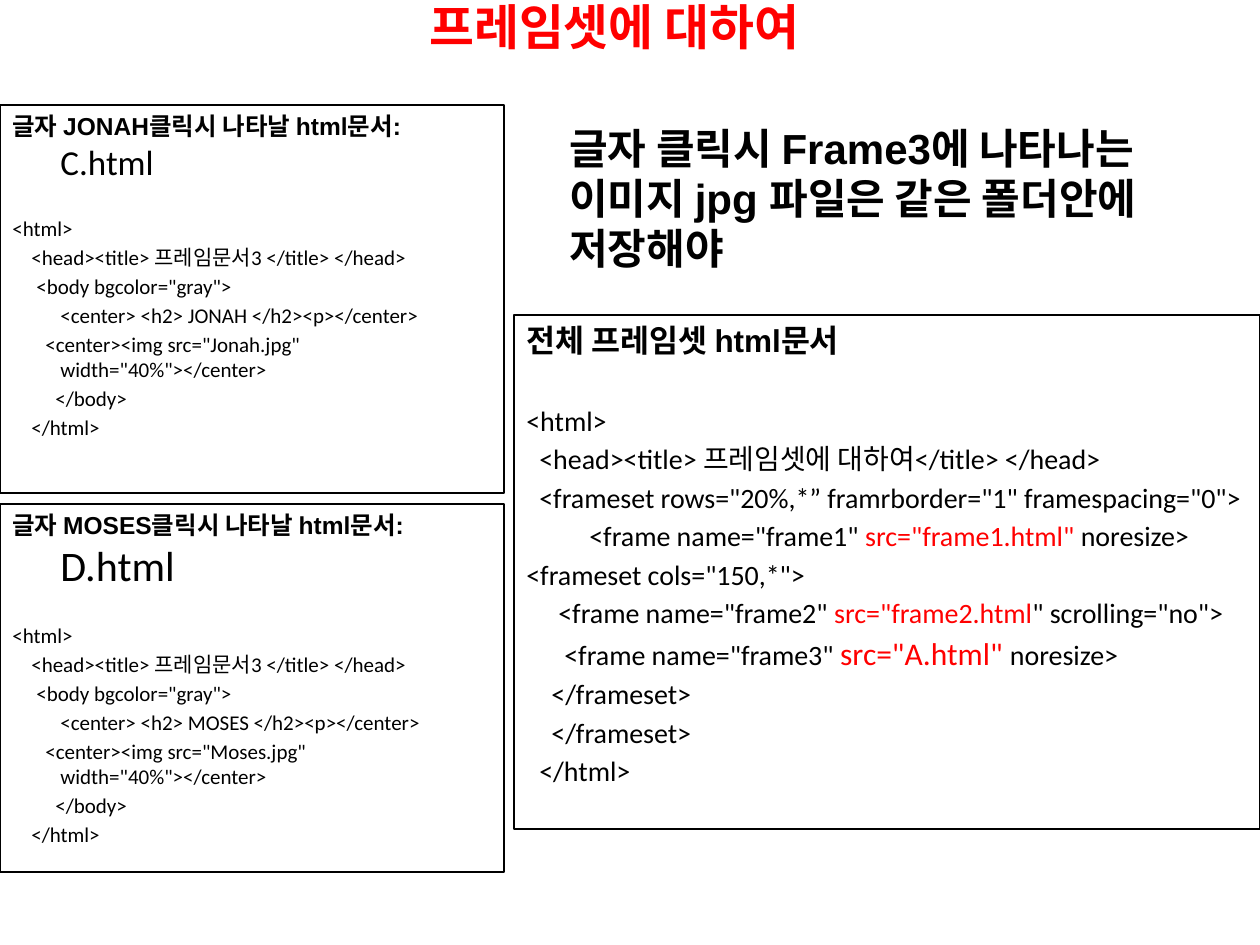
from dataclasses import dataclass

from pptx import Presentation
from pptx.dml.color import RGBColor
from pptx.enum.shapes import MSO_SHAPE
from pptx.enum.text import MSO_ANCHOR, MSO_AUTO_SIZE, PP_ALIGN
from pptx.util import Emu, Pt


@dataclass(frozen=True)
class Theme:
    ink: RGBColor = RGBColor(0x00, 0x00, 0x00)
    accent: RGBColor = RGBColor(0xFF, 0x00, 0x00)
    head_font: str = "Arial"
    code_font: str = "Calibri"
    title: float = 27.9
    note: float = 24
    code: float = 12
    code_head: float = 14
    frameset: float = 16
    frameset_head: float = 18
    border: float = 0.75
    before: float = 0.175
    blank_line: float = 1.4
    hanging: int = 48


@dataclass(frozen=True)
class Box:
    left: int
    top: int
    width: int
    height: int


@dataclass(frozen=True)
class Run:
    text: str
    size: float
    font: str
    bold: bool = False
    color: RGBColor = Theme.ink


@dataclass(frozen=True)
class Line:
    runs: list[Run]
    offset: int = 0
    gap: float = 0


@dataclass(frozen=True)
class Panel:
    box: Box
    lines: list[Line]


T = Theme()


def px(n: int) -> Emu:
    return Emu(round(n * 914400 / 126))


def set_all(obj, values: dict) -> None:
    for name, value in values.items():
        setattr(obj, name, value)


def add_runs(p, runs: list[Run]) -> None:
    for run in runs:
        r = p.add_run()
        r.text = run.text
        set_all(r.font, {"name": run.font, "size": Pt(run.size), "bold": run.bold})
        r.font.color.rgb = run.color


def add_text(s, box: Box, run: Run, frame: dict, para: dict) -> None:
    sp = s.shapes.add_textbox(px(box.left), px(box.top), px(box.width), px(box.height))
    set_all(sp.text_frame, {"word_wrap": True, **frame})
    p = sp.text_frame.paragraphs[0]
    set_all(p, para)
    add_runs(p, [run])


def add_panel(s, panel: Panel) -> None:
    b = panel.box
    sp = s.shapes.add_shape(MSO_SHAPE.RECTANGLE, px(b.left), px(b.top), px(b.width), px(b.height))
    sp.shadow.inherit = False
    sp.fill.background()
    sp.line.color.rgb = T.ink
    sp.line.width = Pt(T.border)
    tf = sp.text_frame
    set_all(tf, {"word_wrap": True, "vertical_anchor": MSO_ANCHOR.TOP})
    for i, line in enumerate(panel.lines):
        p = tf.add_paragraph() if i else tf.paragraphs[0]
        before = Pt(round(line.runs[0].size * T.before + line.gap, 1))
        set_all(p, {"alignment": PP_ALIGN.LEFT, "space_before": before})
        pPr = p._p.get_or_add_pPr()
        pPr.set("marL", str(px(T.hanging)))
        pPr.set("indent", str(px(line.offset - T.hanging)))
        add_runs(p, line.runs)


def code_lines(size: float, rows: list[tuple]) -> list[Line]:
    lines = []
    for i, (offset, *parts) in enumerate(rows):
        runs = [part if isinstance(part, Run) else Run(part, size, T.code_font) for part in parts]
        lines.append(Line(runs, offset, 0 if i else size * T.blank_line))
    return lines


def source(text: str, size: float = T.frameset) -> Run:
    return Run(text, size, T.code_font, color=T.accent)


def name_panel(box: Box, name: str, file: str, file_size: float) -> Panel:
    head = Line([
        Run(f"글자 {name.upper()}클릭시 나타날 html문서:", T.code_head, T.head_font, True),
        Run(" ", T.code, T.code_font),
        Run(file, file_size, T.code_font),
    ])
    return Panel(box, [head] + code_lines(T.code, [
        (0, "<html>"),
        (19, "<head><title> 프레임문서3 </title> </head>"),
        (24, '<body bgcolor="gray">'),
        (48, f"<center> <h2> {name.upper()} </h2><p></center>"),
        (33, f'<center><img src="{name}.jpg" width="40%"></center>'),
        (43, "</body>"),
        (19, "</html>"),
    ]))


def frameset_panel(box: Box) -> Panel:
    head = Line([Run("전체 프레임셋 html문서", T.frameset_head, T.head_font, True)])
    return Panel(box, [head] + code_lines(T.frameset, [
        (0, "<html>"),
        (13, "<head><title> 프레임셋에 대하여</title> </head>"),
        (13, '<frameset rows="20%,*” framrborder="1" framespacing="0">'),
        (63, '<frame name="frame1" ', source('src="frame1.html" '), "noresize>"),
        (0, '<frameset cols="150,*">'),
        (32, '<frame name="frame2" ', source('src="frame2.html'), '" scrolling="no">'),
        (38, '<frame name="frame3" ', source('src="A.html" ', T.frameset_head), "noresize>"),
        (25, "</frameset>"),
        (25, "</frameset>"),
        (13, "</html>"),
    ]))


def main() -> None:
    prs = Presentation()
    set_all(prs, {"slide_width": px(1260), "slide_height": px(945)})
    s = prs.slides.add_slide(prs.slide_layouts[6])
    add_text(s, Box(399, 0, 431, 63),
             Run("프레임셋에 대하여", T.title, T.code_font, True, T.accent),
             {"vertical_anchor": MSO_ANCHOR.MIDDLE},
             {"alignment": PP_ALIGN.CENTER, "line_spacing": 0.8})
    add_text(s, Box(557, 116, 683, 165),
             Run("글자 클릭시 Frame3에 나타나는 이미지 jpg 파일은 같은 폴더안에 저장해야",
                 T.note, T.head_font, True),
             {"auto_size": MSO_AUTO_SIZE.SHAPE_TO_FIT_TEXT},
             {"space_before": Pt(round(T.note * T.before, 1))})
    for panel in (
        frameset_panel(Box(514, 315, 746, 514)),
        name_panel(Box(0, 504, 504, 368), "Moses", "D.html", 24),
        name_panel(Box(0, 105, 504, 388), "Jonah", "C.html", 20),
    ):
        add_panel(s, panel)
    prs.save("out.pptx")


if __name__ == "__main__":
    main()
